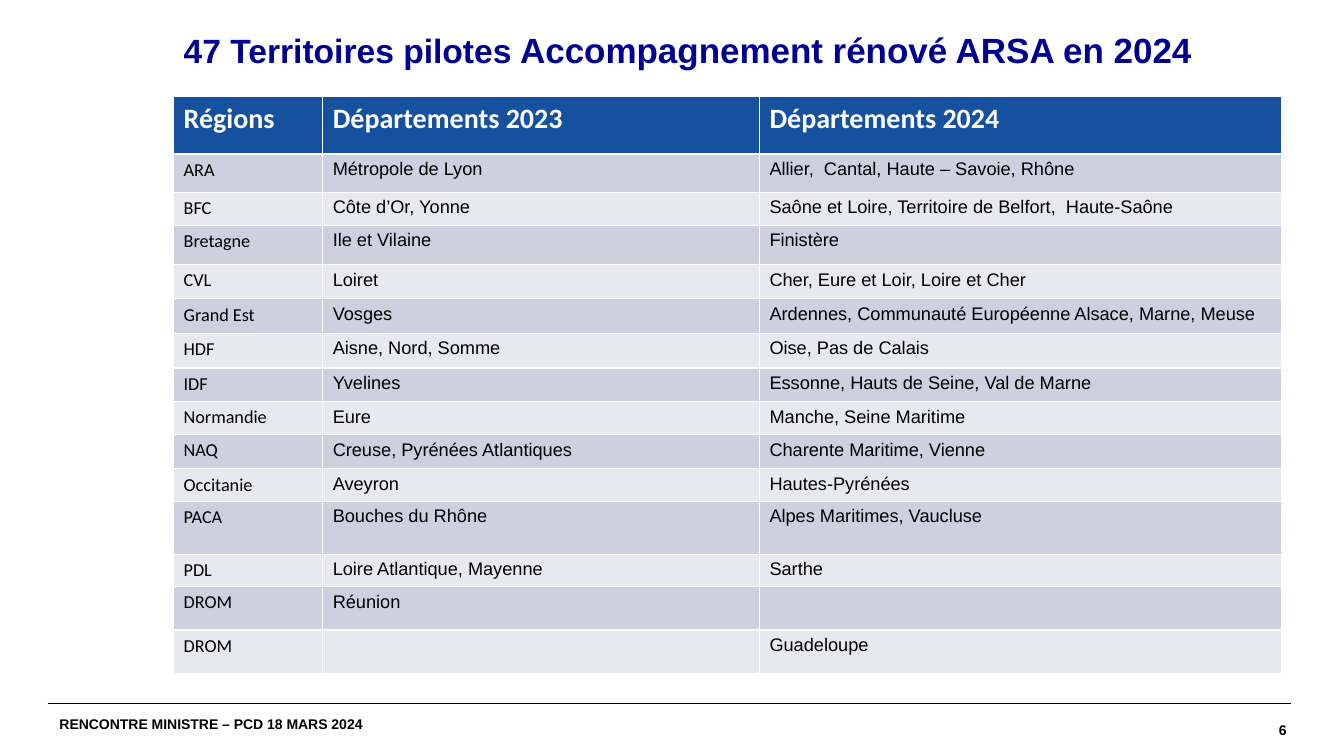
from dataclasses import dataclass

import lxml.etree
import pptx
import pptx.dml.color
import pptx.enum.shapes
import pptx.enum.text
import pptx.oxml.ns
import pptx.util

Pt = pptx.util.Pt
RGBColor = pptx.dml.color.RGBColor
Align = pptx.enum.text.PP_ALIGN
Anchor = pptx.enum.text.MSO_ANCHOR


@dataclass(frozen=True)
class Theme:
    text_font: str = "Arial"
    region_font: str = "Calibri"
    title_color: str = "000091"
    text_color: str = "000000"
    header_text: str = "FFFFFF"
    header_fill: str = "16519F"
    band_fills: tuple = ("E8E9F0", "CCD0DF")
    title_size: float = 24
    subtitle_size: float = 25
    header_size: float = 20
    cell_size: float = 13
    footer_size: float = 10


theme = Theme()


def add_run(paragraph, text, color, **formats):
    run = paragraph.add_run()
    run.text = text
    run.font.color.rgb = RGBColor.from_string(color)
    for name, value in formats.items():
        setattr(run.font, name, value)


presentation = pptx.Presentation()
presentation.slide_width = Pt(960)
presentation.slide_height = Pt(540)
slide = presentation.slides.add_slide(presentation.slide_layouts[5])

# Footer rules
for rule_left in (34, 37.5):
    rule = slide.shapes.add_connector(
        pptx.enum.shapes.MSO_CONNECTOR.STRAIGHT,
        Pt(rule_left), Pt(502.5), Pt(rule_left + 885), Pt(502.5))
    rule.line.color.rgb = RGBColor.from_string(theme.text_color)
    rule.line.width = Pt(0.8)
    lxml.etree.SubElement(rule.element.spPr, pptx.oxml.ns.qn("a:effectLst"))

# Title
title = slide.shapes.title
title_box = {"left": 124, "top": 20, "width": 811, "height": 34}
for name, value in title_box.items():
    setattr(title, name, Pt(value))
title.text_frame.vertical_anchor = Anchor.TOP
title.text_frame.auto_size = pptx.enum.text.MSO_AUTO_SIZE.NONE
paragraph = title.text_frame.paragraphs[0]
title_format = {"alignment": Align.LEFT, "line_spacing": 0.9, "space_after": Pt(6.7)}
for name, value in title_format.items():
    setattr(paragraph, name, value)
for text, size in (("47 Territoires pilotes", theme.title_size),
                   (" Accompagnement rénové ARSA en 2024", theme.subtitle_size)):
    add_run(paragraph, text, theme.title_color,
            name=theme.text_font, size=Pt(size), bold=True)

# Table of regions: row height, then the three cell texts
rows = [
    (41, "Régions", "Départements 2023", "Départements 2024"),
    (27.5, "ARA", "Métropole de Lyon", "Allier,  Cantal, Haute – Savoie, Rhône"),
    (23.5, "BFC", "Côte d’Or, Yonne",
     "Saône et Loire, Territoire de Belfort,  Haute-Saône"),
    (28, "Bretagne", "Ile et Vilaine", "Finistère"),
    (24.5, "CVL", "Loiret", "Cher, Eure et Loir, Loire et Cher"),
    (24.5, "Grand Est", "Vosges",
     "Ardennes, Communauté Européenne Alsace, Marne, Meuse"),
    (25, "HDF", "Aisne, Nord, Somme", "Oise, Pas de Calais"),
    (24, "IDF", "Yvelines", "Essonne, Hauts de Seine, Val de Marne"),
    (23.5, "Normandie", "Eure", "Manche, Seine Maritime"),
    (24.5, "NAQ", "Creuse, Pyrénées Atlantiques", "Charente Maritime, Vienne"),
    (23, "Occitanie", "Aveyron", "Hautes-Pyrénées"),
    (38, "PACA", "Bouches du Rhône", "Alpes Maritimes, Vaucluse"),
    (23, "PDL", "Loire Atlantique, Mayenne", "Sarthe"),
    (31, "DROM", "Réunion", ""),
    (31, "DROM", "", "Guadeloupe"),
]
column_widths = (106.5, 312, 373)
table = slide.shapes.add_table(
    len(rows), len(column_widths), Pt(124), Pt(69),
    Pt(sum(column_widths)), Pt(sum(row[0] for row in rows))).table
for column, width in zip(table.columns, column_widths):
    column.width = Pt(width)
for row_index, (height, *texts) in enumerate(rows):
    table.rows[row_index].height = Pt(height)
    header = row_index == 0
    fill = theme.header_fill if header else theme.band_fills[row_index % 2]
    color = theme.header_text if header else theme.text_color
    size = theme.header_size if header else theme.cell_size
    for column_index, text in enumerate(texts):
        cell = table.cell(row_index, column_index)
        cell.fill.solid()
        cell.fill.fore_color.rgb = RGBColor.from_string(fill)
        if text:
            in_region_font = header or column_index == 0
            add_run(cell.text_frame.paragraphs[0], text, color,
                    name=theme.region_font if in_region_font else theme.text_font,
                    size=Pt(size), bold=header)

# Footer text and page number: text, box, margins (horizontal, vertical), alignment
footers = [
    ("RENCONTRE MINISTRE – PCD 18 MARS 2024", (33, 502.5, 248.5, 29), (9.5, 5), Align.LEFT),
    ("6", (777, 502.5, 142, 37.5), (0, 0), Align.RIGHT),
]
for text, box, (margin_x, margin_y), alignment in footers:
    frame = slide.shapes.add_textbox(*map(Pt, box)).text_frame
    frame_format = {
        "word_wrap": True, "vertical_anchor": Anchor.MIDDLE,
        "margin_left": Pt(margin_x), "margin_right": Pt(margin_x),
        "margin_top": Pt(margin_y), "margin_bottom": Pt(margin_y),
    }
    for name, value in frame_format.items():
        setattr(frame, name, value)
    frame.paragraphs[0].alignment = alignment
    add_run(frame.paragraphs[0], text, theme.text_color,
            name=theme.text_font, size=Pt(theme.footer_size), bold=True)

presentation.save("out.pptx")
